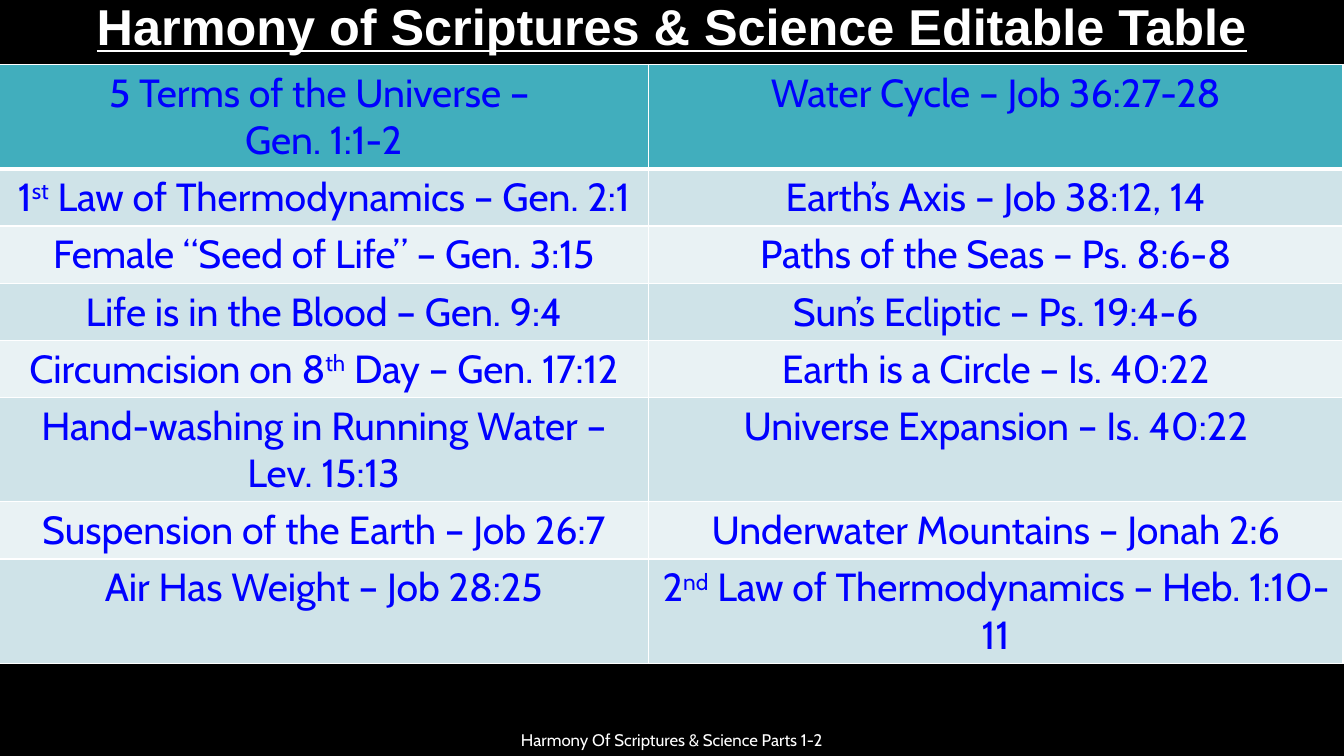
from dataclasses import dataclass

from lxml import etree
from pptx import Presentation, util as u
from pptx.dml.color import RGBColor
from pptx.enum import text as t
from pptx.oxml import ns

WIDTH, HEIGHT = 13.33, 7.5
COLOURS = {
    "background": "000000",
    "caption": "FFFFFF",
    "verse": "0000FF",
    "header": "41AEBD",
    "odd": "CFE3E8",
    "even": "E9F2F4",
    "border": "FFFFFF",
}
COLUMN_WIDTHS = (6.44, 6.89)
ROW_HEIGHT = 0.41

# A part between carets is raised; a line break starts a new paragraph.
HARMONIES = (
    ("5 Terms of the Universe – \nGen. 1:1-2", "Water Cycle – Job 36:27-28"),
    ("1^st^ Law of Thermodynamics – Gen. 2:1", "Earth’s Axis – Job 38:12, 14"),
    ("Female “Seed of Life” – Gen. 3:15", "Paths of the Seas – Ps. 8:6-8"),
    ("Life is in the Blood – Gen. 9:4", "Sun’s Ecliptic – Ps. 19:4-6"),
    ("Circumcision on 8^th^ Day – Gen. 17:12", "Earth is a Circle – Is. 40:22"),
    ("Hand-washing in Running Water – Lev. 15:13", "Universe Expansion – Is. 40:22"),
    ("Suspension of the Earth – Job 26:7", "Underwater Mountains – Jonah 2:6"),
    ("Air Has Weight – Job 28:25", "2^nd^ Law of Thermodynamics – Heb. 1:10-11"),
)


@dataclass(frozen=True)
class TextStyle:
    size: int
    font: str
    colour: str
    emphasis: bool = False
    line_spacing: float = 1.0


@dataclass(frozen=True)
class Caption:
    """A line of text placed by shares of the slide's size."""
    wording: str
    left: float
    top: float
    width: float
    height: float
    style: TextStyle


VERSE_STYLE = TextStyle(28, "Cabin", "verse")
CAPTIONS = (
    Caption("Harmony of Scriptures & Science Editable Table", 0, 0, 1, 0.077,
            TextStyle(36, "Arial", "caption", True, 0.9)),
    Caption("Harmony Of Scriptures & Science Parts 1-2", 0.125, 0.956, 0.75, 0.044,
            TextStyle(12, "Cabin", "caption")),
)


def rgb(name: str) -> RGBColor:
    return RGBColor.from_string(COLOURS[name])


def write(frame, wording: str, style: TextStyle) -> None:
    for index, line in enumerate(wording.split("\n")):
        paragraph = frame.add_paragraph() if index else frame.paragraphs[0]
        paragraph.alignment = t.PP_ALIGN.CENTER
        paragraph.line_spacing = style.line_spacing
        for position, part in enumerate(line.split("^")):
            run = paragraph.add_run()
            run.text = part
            run.font.size = u.Pt(style.size)
            run.font.name = style.font
            run.font.bold = style.emphasis
            run.font.underline = style.emphasis
            run.font.color.rgb = rgb(style.colour)
            if position % 2:
                run.font._element.set("baseline", "30000")


def add_caption(slide, caption: Caption) -> None:
    box = slide.shapes.add_textbox(
        u.Inches(caption.left * WIDTH), u.Inches(caption.top * HEIGHT),
        u.Inches(caption.width * WIDTH), u.Inches(caption.height * HEIGHT))
    frame = box.text_frame
    frame.word_wrap = True
    frame.vertical_anchor = t.MSO_ANCHOR.MIDDLE
    write(frame, caption.wording, caption.style)


def set_borders(cell, top: int, bottom: int) -> None:
    properties = cell._tc.get_or_add_tcPr()
    for side, points in (("L", 1), ("R", 1), ("T", top), ("B", bottom)):
        line = etree.SubElement(properties, ns.qn(f"a:ln{side}"), w=str(u.Pt(points)))
        fill = etree.SubElement(line, ns.qn("a:solidFill"))
        etree.SubElement(fill, ns.qn("a:srgbClr"), val=COLOURS["border"])


def add_harmony_table(slide) -> None:
    table = slide.shapes.add_table(
        len(HARMONIES), len(COLUMN_WIDTHS), u.Inches(-0.01), u.Inches(0.64),
        u.Inches(sum(COLUMN_WIDTHS)), u.Inches(ROW_HEIGHT * len(HARMONIES))).table
    table.first_row = table.horz_banding = False
    for column, width in zip(table.columns, COLUMN_WIDTHS):
        column.width = u.Inches(width)
    for row, verses in enumerate(HARMONIES):
        band = "header" if row == 0 else "odd" if row % 2 else "even"
        for column, verse in enumerate(verses):
            cell = table.cell(row, column)
            set_borders(cell, top=3 if row == 1 else 1, bottom=3 if row == 0 else 1)
            cell.fill.solid()
            cell.fill.fore_color.rgb = rgb(band)
            write(cell.text_frame, verse, VERSE_STYLE)


def main() -> None:
    deck = Presentation()
    deck.slide_width, deck.slide_height = u.Inches(WIDTH), u.Inches(HEIGHT)
    slide = deck.slides.add_slide(deck.slide_layouts[6])
    slide.background.fill.solid()
    slide.background.fill.fore_color.rgb = rgb("background")
    for caption in CAPTIONS:
        add_caption(slide, caption)
    add_harmony_table(slide)
    deck.save("out.pptx")


if __name__ == "__main__":
    main()
